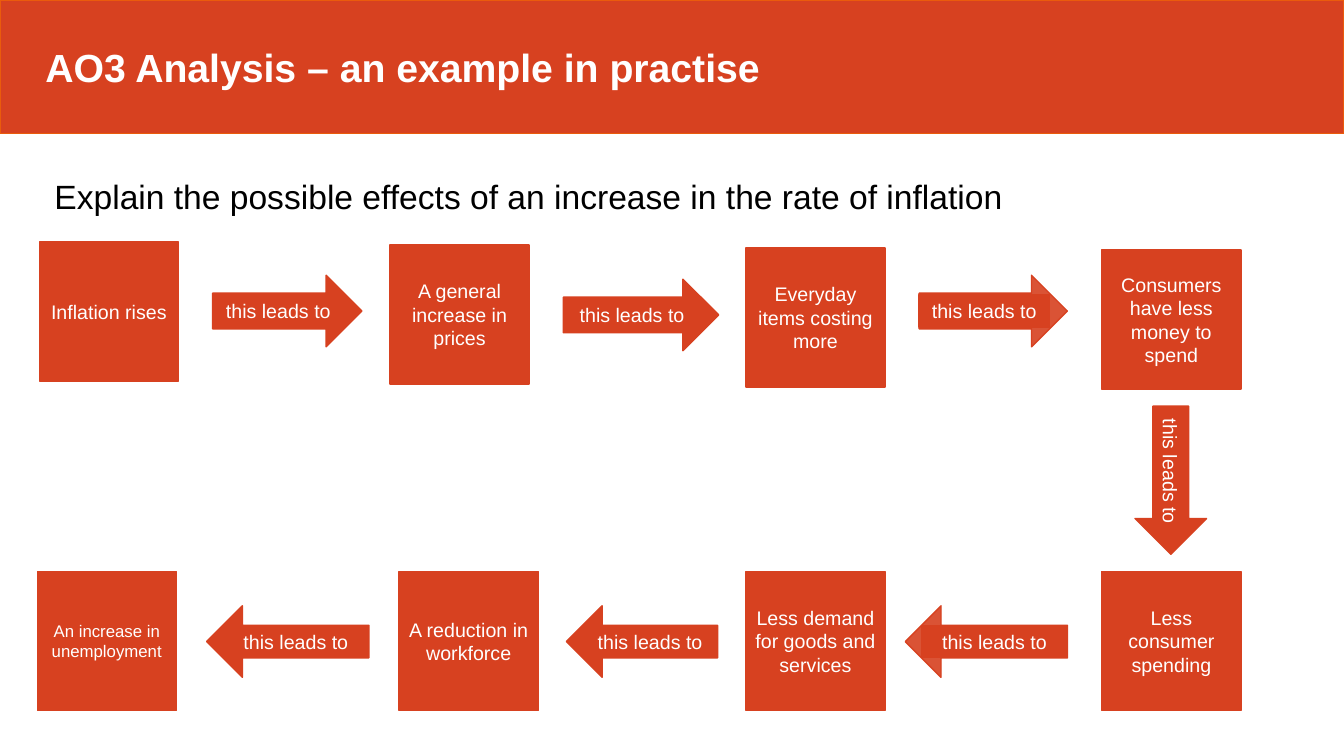
from dataclasses import dataclass

from lxml import etree
from pptx import Presentation
from pptx.dml.color import RGBColor
from pptx.enum.shapes import MSO_SHAPE
from pptx.enum.text import MSO_ANCHOR, MSO_AUTO_SIZE, PP_ALIGN
from pptx.oxml.ns import qn
from pptx.util import Pt

RECTANGLE = MSO_SHAPE.RECTANGLE
RIGHT, LEFT = MSO_SHAPE.RIGHT_ARROW, MSO_SHAPE.LEFT_ARROW
MIDDLE, TOP = MSO_ANCHOR.MIDDLE, MSO_ANCHOR.TOP
ALIGN_LEFT, CENTER = PP_ALIGN.LEFT, PP_ALIGN.CENTER
NO_AUTOFIT = MSO_AUTO_SIZE.NONE


@dataclass(frozen=True)
class Theme:
    font: str = "Arial"
    red: RGBColor = RGBColor(0xD7, 0x41, 0x20)
    orange: RGBColor = RGBColor(0xEA, 0x5B, 0x0C)
    white: RGBColor = RGBColor(0xFF, 0xFF, 0xFF)
    black: RGBColor = RGBColor(0, 0, 0)
    title_size: float = 28
    question_size: float = 24
    label_size: float = 14
    small_size: float = 12


THEME = Theme()
PAGE_WIDTH, PAGE_HEIGHT = 960, 540
INSET = 3.6
BOX_SIZE = 99.4
ARROW_HEIGHT = 51.1
PLATE_HEIGHT = 23
LINK_TEXT = "this leads to"
SHAFT = {RIGHT: 0.5, LEFT: 0.455}  # share of the arrow's height
BOTTOM_BOX_TOP, BOTTOM_ARROW_TOP = 408.2, 432.7

# Left, top, text, type size
BOXES = [
    (28.1, 172.8, "Inflation rises", THEME.label_size),
    (278.6, 175, "A general increase in prices", THEME.label_size),
    (532.8, 177.1, "Everyday items costing more", THEME.label_size),
    (787, 178.6, "Consumers have less money to spend", THEME.label_size),
    (787, BOTTOM_BOX_TOP, "Less consumer spending", THEME.label_size),
    (532.8, BOTTOM_BOX_TOP, "Less demand for goods and services", THEME.label_size),
    (285.1, BOTTOM_BOX_TOP, "A reduction in workforce", THEME.label_size),
    (26.6, BOTTOM_BOX_TOP, "An increase in unemployment", THEME.small_size),
]

# Kind, left, top, width, rotation, opacity in percent
ARROWS = [
    (RIGHT, 151.9, 196.6, 106.6, 0, 100),
    (RIGHT, 402.5, 199.4, 110.9, 0, 100),
    (RIGHT, 656.6, 196.6, 105.8, 0, 90),
    (RIGHT, 783.4, 317.5, 105.8, 90, 100),
    (LEFT, 646.6, BOTTOM_ARROW_TOP, 115.9, 0, 90),
    (LEFT, 404.6, BOTTOM_ARROW_TOP, 108, 0, 100),
    (LEFT, 147.6, BOTTOM_ARROW_TOP, 115.9, 0, 100),
]


def set_all(target, values):
    for name, value in values.items():
        setattr(target, name, value)


def paint(shape, line_color):
    shape.fill.solid()
    shape.fill.fore_color.rgb = THEME.red
    shape.line.color.rgb = line_color
    shape.line.width = Pt(1)


def write(shape, text, size, color=THEME.white, bold=False,
          align=CENTER, anchor=MIDDLE, left_inset=INSET):
    frame = shape.text_frame
    set_all(frame, {
        "word_wrap": True, "auto_size": NO_AUTOFIT, "vertical_anchor": anchor,
        "margin_left": Pt(left_inset), "margin_right": Pt(INSET),
        "margin_top": Pt(INSET), "margin_bottom": Pt(INSET),
    })
    para = frame.paragraphs[0]
    set_all(para, {"alignment": align, "space_before": Pt(0), "line_spacing": 1.0})
    span = para.add_run()
    span.text = text
    set_all(span.font, {"name": THEME.font, "size": Pt(size), "bold": bold})
    span.font.color.rgb = color
    return para


def place(shape, left, top, width, height):
    set_all(shape, {"left": Pt(left), "top": Pt(top),
                    "width": Pt(width), "height": Pt(height)})


def add_red_shape(page, kind, left, top, width, height):
    shape = page.shapes.add_shape(kind, Pt(left), Pt(top), Pt(width), Pt(height))
    shape.shadow.inherit = False
    paint(shape, THEME.red)
    return shape


def add_box(page, left, top, text, size):
    box = add_red_shape(page, RECTANGLE, left, top, BOX_SIZE, BOX_SIZE)
    write(box, text, size)


def add_arrow(page, kind, left, top, width, rotation, opacity):
    arrow = add_red_shape(page, kind, left, top, width, ARROW_HEIGHT)
    arrow.rotation = rotation
    arrow.adjustments[0] = SHAFT[kind]
    label = arrow
    if opacity < 100:
        # A see-through arrow carries its label on a solid plate
        color = arrow.fill._xPr.find(qn("a:solidFill"))[0]
        etree.SubElement(color, qn("a:alpha"), val=str(opacity * 1000))
        tip = ARROW_HEIGHT / 2 * SHAFT[kind]
        plate_left = left + tip if kind == LEFT else left
        plate_top = top + (ARROW_HEIGHT - PLATE_HEIGHT) / 2
        label = add_red_shape(page, RECTANGLE, plate_left, plate_top,
                              width - tip, PLATE_HEIGHT)
    write(label, LINK_TEXT, THEME.label_size)


def fill_title(page, text):
    title = page.shapes.title
    place(title, 0, 0, PAGE_WIDTH, 95.2)
    paint(title, THEME.orange)
    write(title, text, THEME.title_size, bold=True, align=ALIGN_LEFT, left_inset=32.4)


def fill_question(page, text):
    question = page.placeholders[1]
    place(question, 35.3, 121.7, 907.2, 36)
    para = write(question, text, THEME.question_size, color=THEME.black,
                 align=ALIGN_LEFT, anchor=TOP)
    properties = para._p.get_or_add_pPr()
    properties.set("marL", "0")
    properties.set("indent", "0")
    etree.SubElement(properties, qn("a:buNone"))


def main():
    deck = Presentation()
    set_all(deck, {"slide_width": Pt(PAGE_WIDTH), "slide_height": Pt(PAGE_HEIGHT)})
    page = deck.slides.add_slide(deck.slide_layouts[1])

    # Heading and question
    fill_title(page, "AO3 Analysis – an example in practise")
    fill_question(page, "Explain the possible effects of an increase in the rate of inflation")

    # Chain of effects
    for box in BOXES:
        add_box(page, *box)
    for arrow in ARROWS:
        add_arrow(page, *arrow)

    deck.save("out.pptx")


if __name__ == "__main__":
    main()
